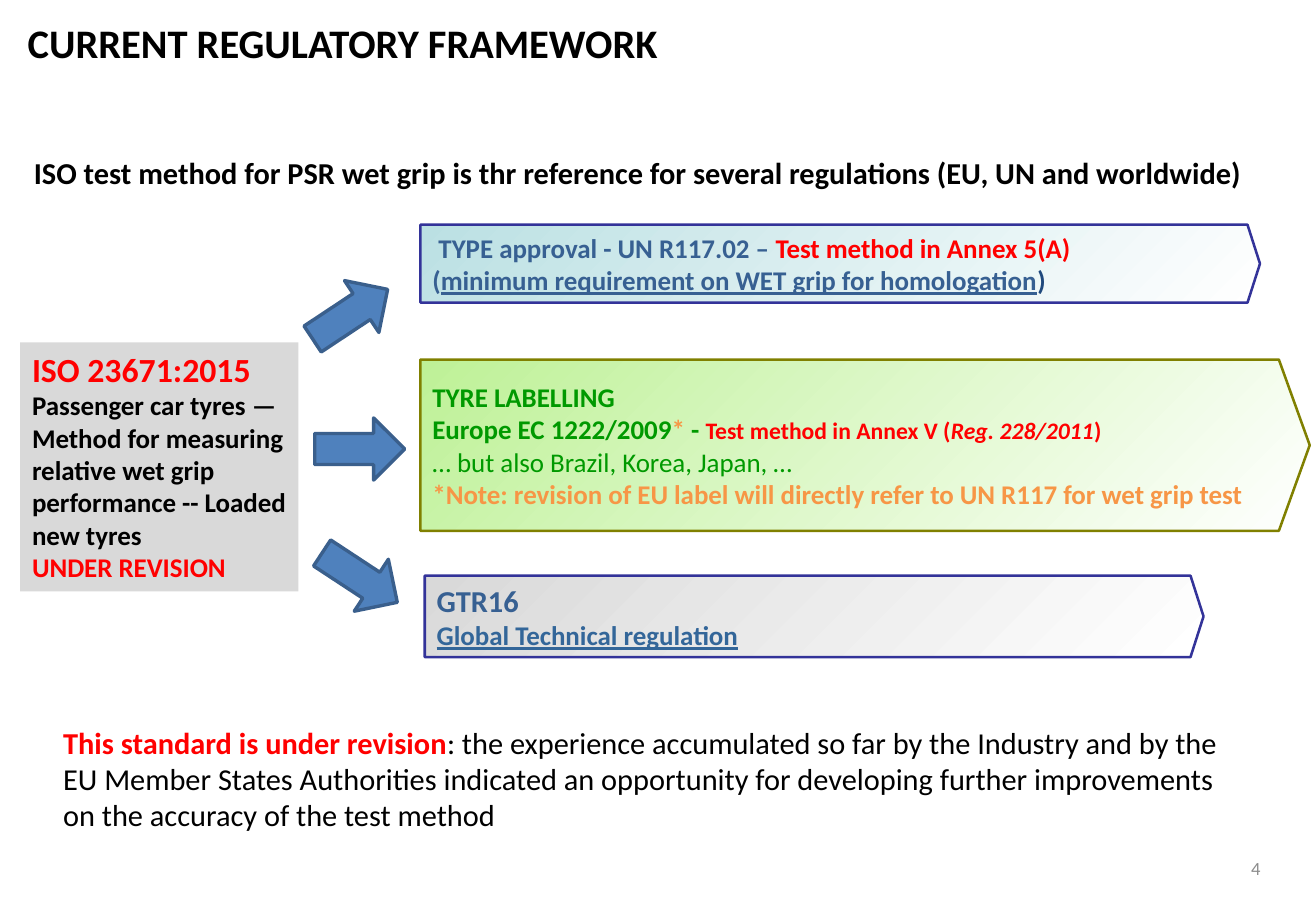
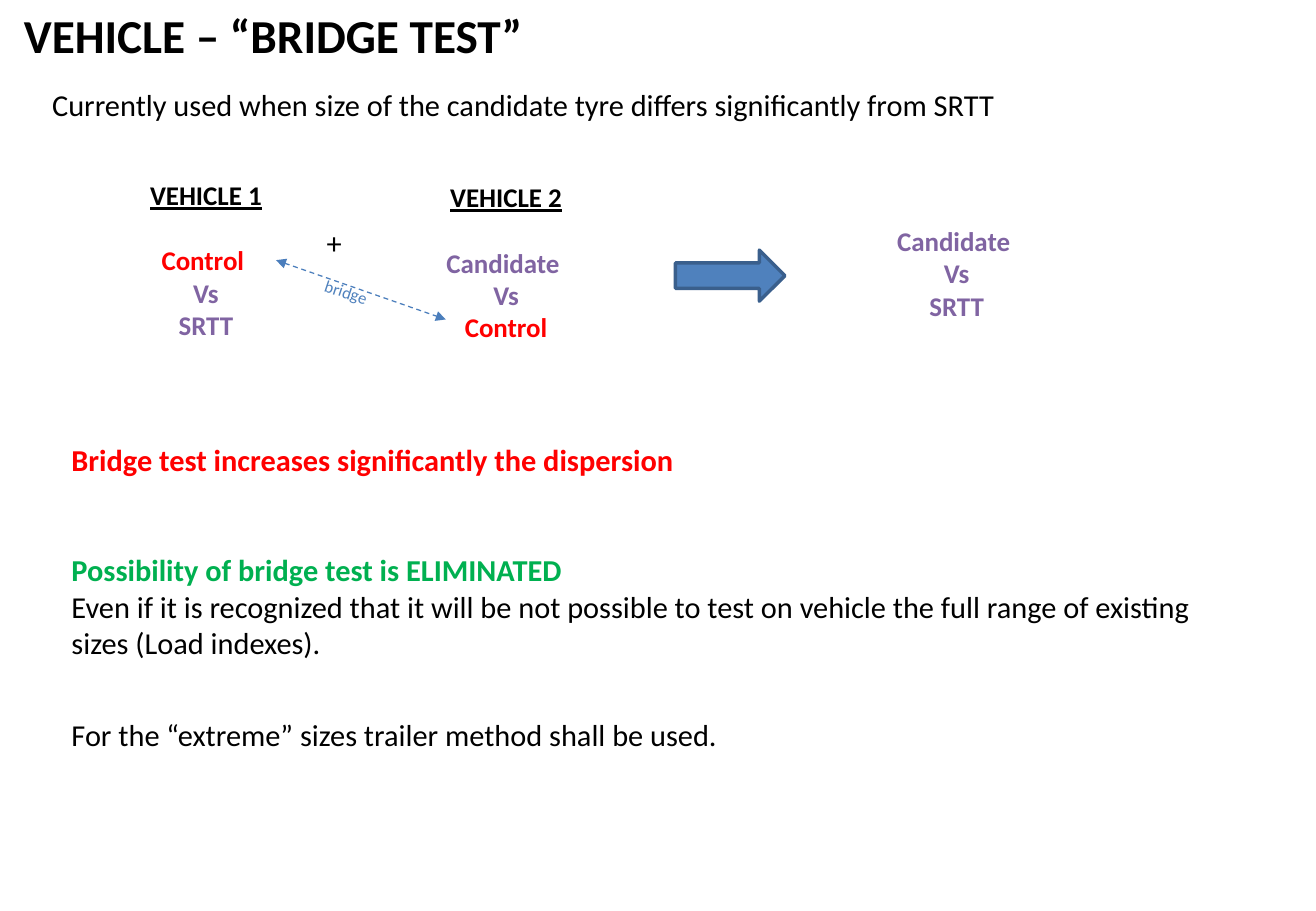
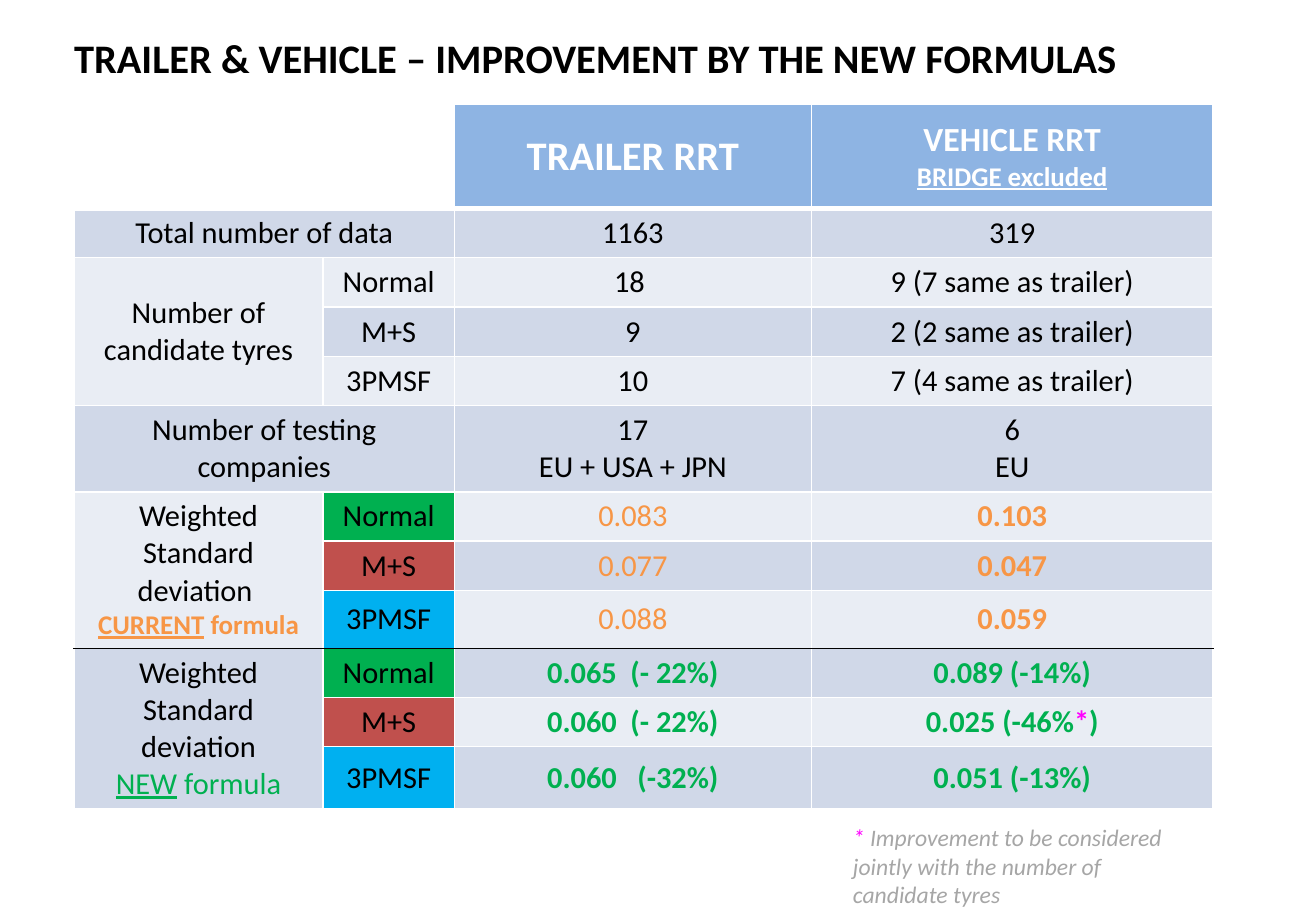
from dataclasses import dataclass
from typing import Any, Optional, Sequence, Union

from lxml import etree
from pptx import Presentation
from pptx.dml.color import RGBColor
from pptx.enum.dml import MSO_LINE
from pptx.enum.shapes import MSO_CONNECTOR, MSO_SHAPE
from pptx.enum.text import MSO_ANCHOR, MSO_AUTO_SIZE, PP_ALIGN
from pptx.oxml.ns import qn
from pptx.util import Cm, Pt

LEFT, CENTER, RIGHT = PP_ALIGN.LEFT, PP_ALIGN.CENTER, PP_ALIGN.RIGHT
TOP, MIDDLE = MSO_ANCHOR.TOP, MSO_ANCHOR.MIDDLE
NO_FIT = MSO_AUTO_SIZE.NONE
RECT, ARROW = MSO_SHAPE.RECTANGLE, MSO_SHAPE.RIGHT_ARROW
CALLOUT = MSO_SHAPE.RIGHT_ARROW_CALLOUT
STRAIGHT = MSO_CONNECTOR.STRAIGHT
DASH = MSO_LINE.DASH

FONT = "Calibri"
TITLE_AND_BODY, TITLE_ONLY = 1, 5
COLORS = {
    "black": "000000", "white": "FFFFFF", "red": "FF0000", "gray": "D9D9D9",
    "number": "8C8C8C", "note": "A6A6A6", "magenta": "FF00FF",
    "blue": "4F81BD", "blue_edge": "3A5F8C", "bridge": "4B7EBC",
    "navy": "376092", "dark_navy": "1F497D", "steel": "336699", "indigo": "333399",
    "aqua": "BBE0E3", "lime": "BEF197", "olive": "808000", "label": "009900",
    "orange": "F79646", "purple": "8064A2", "green": "00B050", "sky": "00B0F0",
    "brick": "C0504D", "header": "8EB4E3", "band_dark": "D0D8E8", "band_light": "E9EDF4",
}


@dataclass(frozen=True)
class Box:
    left: float
    top: float
    width: float
    height: float

    def cm(self) -> tuple:
        return Cm(self.left), Cm(self.top), Cm(self.width), Cm(self.height)


@dataclass(frozen=True)
class Run:
    text: str
    color: Optional[str] = None
    size: Optional[float] = None
    bold: Optional[bool] = None
    italic: bool = False
    underline: bool = False


Para = Union[str, Run, Sequence[Run]]
Content = Union[str, list]


@dataclass(frozen=True)
class Callout:
    box: Box
    head: float
    fill: str
    edge: str
    paras: list
    color: str
    wrap: bool = True


@dataclass(frozen=True)
class Arrow:
    box: Box
    rotation: float = 0


@dataclass(frozen=True)
class TestColumn:
    box: Box
    paras: list
    gaps: tuple = ()


@dataclass(frozen=True)
class CellText:
    content: Content
    fill: Optional[str] = None
    color: str = "black"
    size: float = 18
    bold: bool = False


def rgb(name: str) -> RGBColor:
    return RGBColor.from_string(COLORS[name])


def write(tf: Any, content: Content, *, size: float = 18, color: str = "black",
          bold: bool = False, align: PP_ALIGN = LEFT, anchor: Any = None,
          wrap: Optional[bool] = None, gaps: Sequence[float] = (),
          plain: bool = False) -> None:
    if anchor is not None:
        tf.vertical_anchor = anchor
    if wrap is not None:
        tf.word_wrap = wrap
    paras = [content] if isinstance(content, str) else content
    for i, para in enumerate(paras):
        p = tf.paragraphs[0] if i == 0 else tf.add_paragraph()
        if plain:
            pPr = p._p.get_or_add_pPr()
            pPr.set("marL", "0")
            pPr.set("indent", "0")
            etree.SubElement(pPr, qn("a:buNone"))
        p.alignment = align
        p.space_before = Pt(gaps[i] if i < len(gaps) else 0)
        if isinstance(para, str):
            para = Run(para)
        for run in [para] if isinstance(para, Run) else para:
            r = p.add_run()
            r.text = run.text
            r.font.name = FONT
            r.font.size = Pt(run.size or size)
            r.font.bold = bold if run.bold is None else run.bold
            r.font.italic = run.italic
            r.font.underline = run.underline
            r.font.color.rgb = rgb(run.color or color)


def place(sp: Any, box: Box) -> None:
    sp.left, sp.top, sp.width, sp.height = box.cm()


def add_slide(prs: Any, layout: int, title: str, box: Box, size: float,
              indent: float = 0.25) -> Any:
    slide = prs.slides.add_slide(prs.slide_layouts[layout])
    sp = slide.shapes.title
    place(sp, box)
    tf = sp.text_frame
    tf.auto_size = NO_FIT
    tf.margin_left = Cm(indent)
    write(tf, title, size=size, bold=True, anchor=TOP, wrap=True)
    return slide


def add_text(slide: Any, box: Box, content: Content, *, rotation: float = 0,
             wrap: bool = True, **fmt: Any) -> None:
    sp = slide.shapes.add_textbox(*box.cm())
    sp.rotation = rotation
    write(sp.text_frame, content, wrap=wrap, **fmt)


def add_shape(slide: Any, kind: MSO_SHAPE, box: Box, fill: str,
              edge: Optional[str] = None, width: float = 1.5) -> Any:
    sp = slide.shapes.add_shape(kind, *box.cm())
    sp.shadow.inherit = False
    sp.fill.solid()
    sp.fill.fore_color.rgb = rgb(fill)
    if edge:
        sp.line.color.rgb = rgb(edge)
        sp.line.width = Pt(width)
    else:
        sp.line.fill.background()
    return sp


def add_arrow(slide: Any, arrow: Arrow) -> None:
    sp = add_shape(slide, ARROW, arrow.box, "blue", "blue_edge", 2)
    sp.rotation = arrow.rotation


def add_callout(slide: Any, callout: Callout) -> None:
    sp = add_shape(slide, CALLOUT, callout.box, callout.fill, callout.edge)
    for i, value in enumerate((1, 0.5, callout.head, 0.83)):
        sp.adjustments[i] = value
    sp.fill.gradient()
    sp.fill.gradient_angle = 315
    for stop, name in zip(sp.fill.gradient_stops, (callout.fill, "white")):
        stop.color.rgb = rgb(name)
    write(sp.text_frame, callout.paras, size=16, color=callout.color, bold=True,
          anchor=MIDDLE, wrap=callout.wrap)


def add_double_arrow(slide: Any, x1: float, y1: float, x2: float, y2: float) -> None:
    line = slide.shapes.add_connector(STRAIGHT, Cm(x1), Cm(y1), Cm(x2), Cm(y2))
    line.line.color.rgb = rgb("bridge")
    line.line.width = Pt(0.75)
    line.line.dash_style = DASH
    ln = line.line._get_or_add_ln()
    for end in ("a:headEnd", "a:tailEnd"):
        etree.SubElement(ln, qn(end)).set("type", "triangle")
    etree.SubElement(line._element.spPr, qn("a:effectLst"))


def set_border(cell: Any, side: str, color: str, width: float) -> None:
    ln = etree.SubElement(cell._tc.get_or_add_tcPr(), qn(f"a:ln{side}"))
    ln.set("w", str(Pt(width)))
    fill = etree.SubElement(ln, qn("a:solidFill"))
    etree.SubElement(fill, qn("a:srgbClr")).set("val", COLORS[color])


def build_framework(prs: Any) -> None:
    slide = add_slide(prs, TITLE_ONLY, "CURRENT REGULATORY FRAMEWORK",
                      Box(0.33, 0.25, 14.27, 1.27), 24)
    add_text(slide, Box(20.17, 17.65, 6.43, 1.02), "4", size=11, color="number",
             align=RIGHT, anchor=MIDDLE)
    add_text(slide, Box(0.46, 3.1, 26.14, 1.02),
             "ISO test method for PSR wet grip is thr reference for several "
             "regulations (EU, UN and worldwide)", bold=True)

    callouts = [
        Callout(Box(8.79, 4.7, 17.55, 1.63), 0.16, "aqua", "indigo", [
            [Run(" TYPE approval - UN R117.02 – "),
             Run("Test method in Annex 5(A)", "red")],
            [Run("("),
             Run("minimum requirement on WET grip for homologation", underline=True),
             Run(")", "dark_navy")],
        ], "navy"),
        Callout(Box(8.79, 7.52, 18.59, 3.58), 0.18, "lime", "olive", [
            "TYRE LABELLING",
            [Run("Europe EC 1222/2009"), Run("*", "orange"), Run(" - "),
             Run("Test method in Annex V (", "red", 14),
             Run("Reg. 228/2011", "red", 14, italic=True), Run(")", "red", 14)],
            Run("… but also Brazil, Korea, Japan, …", bold=False),
            Run("*Note: revision of EU label will directly refer to UN R117 "
                "for wet grip test", "orange"),
        ], "label", wrap=False),
        Callout(Box(8.88, 12.04, 16.28, 1.7), 0.16, "gray", "indigo", [
            Run("GTR16", size=18),
            Run("Global Technical regulation", "steel", underline=True),
        ], "navy"),
    ]
    for callout in callouts:
        add_callout(slide, callout)

    sp = add_shape(slide, RECT, Box(0.42, 7.16, 5.82, 5.21), "gray")
    write(sp.text_frame, [
        Run("ISO 23671:2015", "red", 20),
        "Passenger car tyres — Method for measuring relative wet grip "
        "performance -- Loaded new tyres",
        Run("UNDER REVISION", "red"),
    ], size=16, bold=True, anchor=TOP, wrap=True)

    for arrow in (Arrow(Box(6.38, 5.92, 1.88, 1.3), 326.5),
                  Arrow(Box(6.58, 8.74, 1.88, 1.3)),
                  Arrow(Box(6.58, 11.43, 1.88, 1.3), 33.3)):
        add_arrow(slide, arrow)

    add_text(slide, Box(1.07, 15.01, 24.87, 2.57), [[
        Run("This standard is under revision", "red", bold=True),
        Run(": the experience accumulated so far by the Industry and by the EU "
            "Member States Authorities indicated an opportunity for developing "
            "further improvements on the accuracy of the test method"),
    ]])


def build_bridge(prs: Any) -> None:
    slide = add_slide(prs, TITLE_AND_BODY, "VEHICLE – “BRIDGE TEST”",
                      Box(0.25, 0, 15.09, 1.45), 28)
    add_text(slide, Box(0.84, 1.68, 22.71, 1.02),
             "Currently used when size of the candidate tyre differs "
             "significantly from SRTT")

    columns = [
        TestColumn(Box(2.87, 3.61, 2.87, 3.68), [
            Run("VEHICLE 1", "black", underline=True),
            Run("Control ", "red"), "Vs", "SRTT"], (0, 19.5)),
        TestColumn(Box(9.07, 3.66, 3.02, 3.68), [
            Run("VEHICLE 2", "black", underline=True),
            "Candidate ", "Vs", Run("Control", "red")], (0, 19.5)),
        TestColumn(Box(18.49, 4.57, 3.02, 2.31), ["Candidate ", "Vs", "SRTT"]),
    ]
    for column in columns:
        add_text(slide, column.box, column.paras, size=16, color="purple", bold=True,
                 align=CENTER, wrap=False, gaps=column.gaps)

    add_arrow(slide, Arrow(Box(14.12, 5.23, 2.29, 1.07)))
    add_text(slide, Box(6.58, 4.57, 0.84, 1.02), "+", wrap=False)
    add_double_arrow(slide, 5.77, 5.44, 9.32, 6.68)
    add_text(slide, Box(6.53, 5.77, 1.45, 0.69), "bridge", size=10, color="blue",
             rotation=18.4, wrap=False)

    body = slide.placeholders[1]
    place(body, Box(1.24, 9.09, 25.1, 6.83))
    body.text_frame.auto_size = NO_FIT
    write(body.text_frame, [
        Run("Bridge test increases significantly the dispersion", "red", bold=True),
        Run("Possibility of bridge test is ELIMINATED", "green", bold=True),
        "Even if it is recognized that it will be not possible to test on vehicle "
        "the full range of existing sizes (Load indexes).",
        "For the “extreme” sizes trailer method shall be used.",
    ], anchor=TOP, wrap=True, gaps=(0, 44, 0, 33), plain=True)


def improvement_cells() -> dict:
    cells = {
        (0, 2): CellText("TRAILER RRT", "header", "white", 24, True),
        (0, 3): CellText([Run("VEHICLE RRT", size=20),
                          Run("BRIDGE excluded", underline=True)],
                         "header", "white", 16, True),
        (1, 0): CellText("Total number of data"),
        (2, 0): CellText("Number of candidate tyres"),
        (5, 0): CellText("Number of testing companies"),
        (6, 0): CellText(["Weighted Standard deviation ",
                          [Run("CURRENT", "orange", 16, True, underline=True),
                           Run(" formula", "orange", 16, True)]]),
        (9, 0): CellText(["Weighted Standard deviation",
                          [Run("NEW", "green", underline=True),
                           Run(" formula", "green")]]),
    }
    kinds = (("Normal", "green"), ("M+S", "brick"), ("3PMSF", "sky"))
    for start in (2, 6, 9):
        for i, (kind, fill) in enumerate(kinds):
            cells[start + i, 1] = CellText(kind, fill if start > 2 else None)

    values = [
        ("1163", "319"),
        ("18 ", "9 (7 same as trailer)"),
        ("9", "2 (2 same as trailer)"),
        ("10", "7 (4 same as trailer)"),
        (["17", "EU + USA + JPN"], ["6", "EU"]),
        ("0.083", "0.103"),
        ("0.077", "0.047"),
        ("0.088", "0.059"),
        ("0.065  (- 22%)", "0.089 (-14%)"),
        ("0.060  (- 22%)", [[Run("0.025 (-46%"), Run("*", "magenta"), Run(")")]]),
        ("0.060   (-32%)", "0.051 (-13%)"),
    ]
    for row, pair in enumerate(values, 1):
        color = "black" if row < 6 else "orange" if row < 9 else "green"
        for col, value in enumerate(pair, 2):
            bold = row >= 9 or (row >= 6 and col == 3)
            cells[row, col] = CellText(value, color=color, bold=bold)
    return cells


def build_improvement(prs: Any) -> None:
    slide = add_slide(prs, TITLE_ONLY,
                      "TRAILER & VEHICLE – IMPROVEMENT BY THE NEW FORMULAS",
                      Box(0.03, 0.56, 24.51, 1.27), 24, indent=1.52)
    widths = (5.2, 2.75, 7.46, 8.4)
    heights = (2.18, *[0.94] * 4, 1.65, 0.94, 0.94, 1.09, 0.94, 0.94, 1.17)
    box = Box(1.55, 2.18, sum(widths), sum(heights))
    table = slide.shapes.add_table(len(heights), len(widths), *box.cm()).table
    table.first_row = table.horz_banding = False
    for column, width in zip(table.columns, widths):
        column.width = Cm(width)
    for row, height in zip(table.rows, heights):
        row.height = Cm(height)
    for row in (0, 1, 5):
        table.cell(row, 0).merge(table.cell(row, 1))
    for row in (2, 6, 9):
        table.cell(row, 0).merge(table.cell(row + 2, 0))

    cells = improvement_cells()
    last_current = 8
    for row in range(len(heights)):
        for col in range(len(widths)):
            cell = table.cell(row, col)
            last = row + cell.span_height - 1
            set_border(cell, "L", "white", 1)
            set_border(cell, "R", "white", 1)
            set_border(cell, "T", "black" if row == last_current + 1 else "white",
                       3 if row == 1 else 1)
            set_border(cell, "B", "black" if last == last_current else "white",
                       3 if row == 0 else 1)
            text = cells.get((row, col))
            if text is None:
                cell.fill.background()
                continue
            band = "band_dark" if row % 2 else "band_light"
            cell.fill.solid()
            cell.fill.fore_color.rgb = rgb(text.fill or band)
            cell.vertical_anchor = MIDDLE
            write(cell.text_frame, text.content, size=text.size, color=text.color,
                  bold=text.bold, align=CENTER)

    add_text(slide, Box(17.58, 17.09, 7.42, 2.06), [[
        Run("* ", "magenta", italic=True),
        Run("Improvement to be considered jointly with the number of candidate tyres",
            italic=True),
    ]], size=14, color="note")


def main() -> None:
    prs = Presentation()
    prs.slide_width, prs.slide_height = Cm(27.51), Cm(19.05)
    build_framework(prs)
    build_bridge(prs)
    build_improvement(prs)
    prs.save("out.pptx")


if __name__ == "__main__":
    main()
